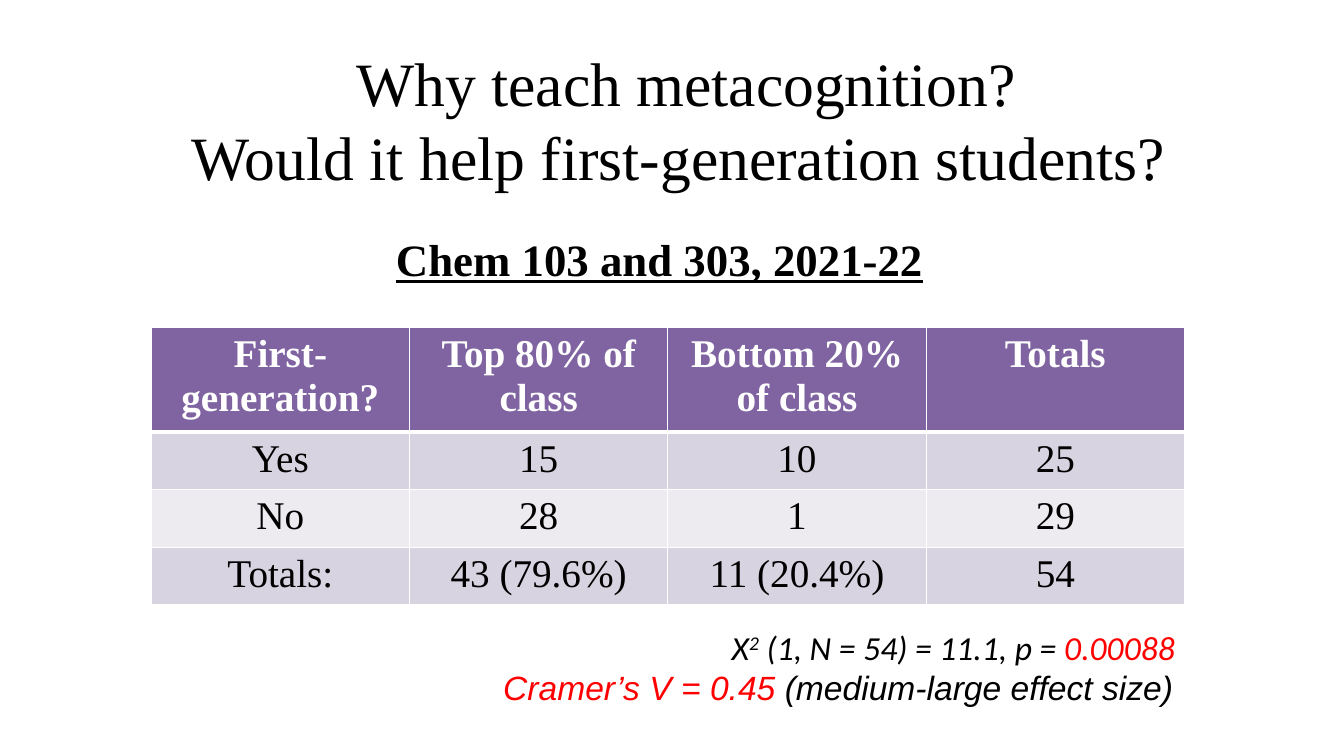
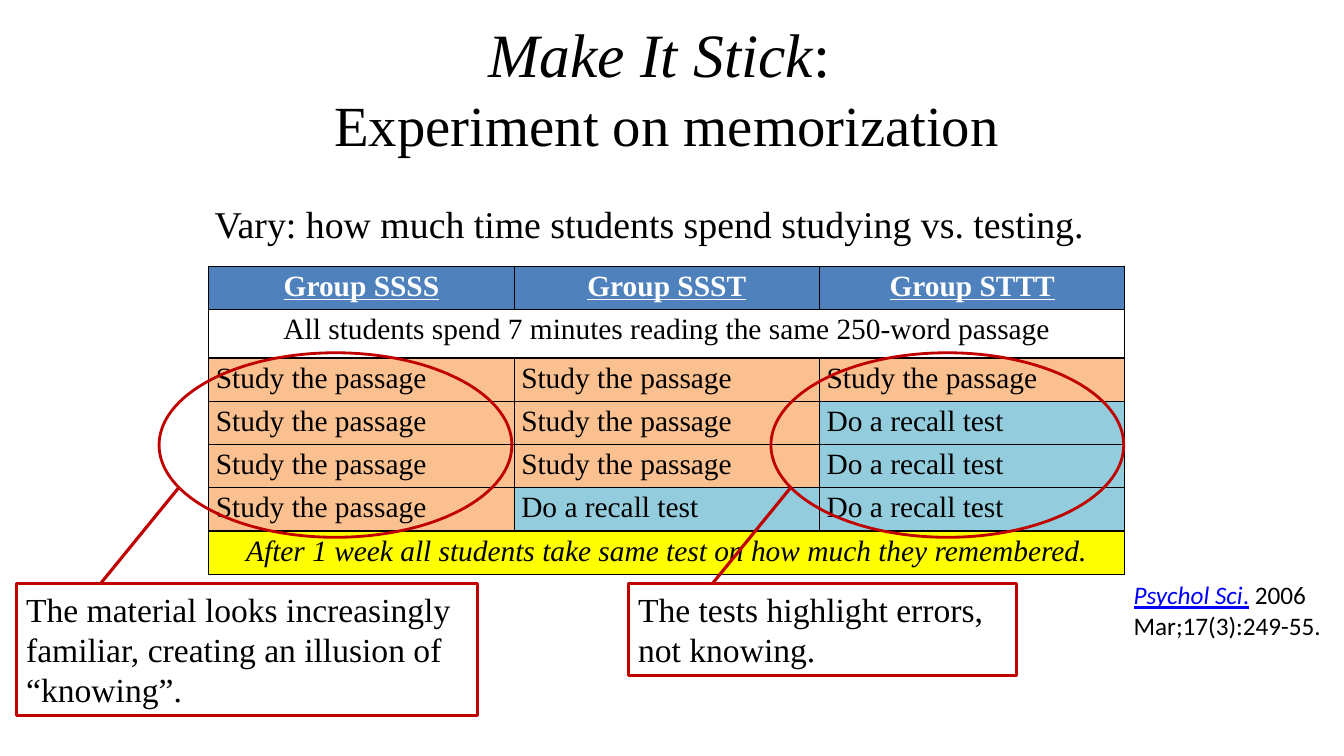
from lxml import etree
from pptx import Presentation
from pptx import util as u
from pptx.dml.color import RGBColor
from pptx.enum import shapes, text
from pptx.oxml.ns import qn

BLACK = RGBColor(0x00, 0x00, 0x00)
WHITE = RGBColor(0xFF, 0xFF, 0xFF)
RED = RGBColor(0xFF, 0x00, 0x00)
DARK_RED = RGBColor(0xC0, 0x00, 0x00)
LINK_BLUE = RGBColor(0x00, 0x00, 0xFF)
PURPLE = RGBColor(0x80, 0x64, 0xA2)
LILAC = RGBColor(0xD8, 0xD3, 0xE0)
PALE_LILAC = RGBColor(0xED, 0xEA, 0xF0)
BLUE = RGBColor(0x4F, 0x81, 0xBD)
ORANGE = RGBColor(0xFA, 0xC0, 0x90)
AQUA = RGBColor(0x93, 0xCD, 0xDD)
YELLOW = RGBColor(0xFF, 0xFF, 0x00)

SERIF = "Times New Roman"
LEFT, CENTER, RIGHT = text.PP_ALIGN.LEFT, text.PP_ALIGN.CENTER, text.PP_ALIGN.RIGHT
TITLE = {"size": 44, "align": CENTER, "anchor": text.MSO_ANCHOR.MIDDLE}


def write(frame, paragraphs, size, align=LEFT, anchor=text.MSO_ANCHOR.TOP,
          font=SERIF, color=BLACK, bold=False, italic=False, underline=False):
    """Each paragraph is a list of (text, run overrides); a newline is a line break."""
    frame.word_wrap = True
    frame.vertical_anchor = anchor
    for index, runs in enumerate(paragraphs):
        paragraph = frame.add_paragraph() if index else frame.paragraphs[0]
        paragraph.alignment = align
        paragraph.font.name, paragraph.font.size = font, u.Pt(size)
        paragraph.font.bold, paragraph.font.italic = bold, italic
        paragraph.font.underline = underline
        paragraph.font.color.rgb = color
        for words, changes in runs:
            if words == "\n":
                paragraph.add_line_break()
                continue
            run = paragraph.add_run()
            run.text = words
            for name, value in changes.items():
                if name == "color":
                    run.font.color.rgb = value
                elif name == "baseline":
                    run.font._element.set("baseline", str(value))
                else:
                    setattr(run.font, name, value)


def fill_cell(cell, words, fill, border_color, thick_sides=(), **style):
    properties = cell._tc.get_or_add_tcPr()
    for side in ("lnL", "lnR", "lnT", "lnB"):
        width = u.Pt(3 if side in thick_sides else 1)
        line = etree.SubElement(properties, qn("a:" + side), w=str(width))
        solid = etree.SubElement(line, qn("a:solidFill"))
        etree.SubElement(solid, qn("a:srgbClr"), val=str(border_color))
    cell.fill.solid()
    cell.fill.fore_color.rgb = fill
    if words:
        write(cell.text_frame, [[(words, {})]], **style)


presentation = Presentation()
presentation.slide_width, presentation.slide_height = u.Cm(33.87), u.Cm(19.05)
blank = presentation.slide_layouts[6]

# Slide 1: title, caption and statistics
slide = presentation.slides.add_slide(blank)
slide_texts = [
    ((2.41, 0.91, 29.79, 4.17),
     [[("Why teach metacognition?", {})],
      [("Would it help first-generation students? ", {})]], TITLE),
    ((9.73, 5.72, 16.94, 1.63), [[("Chem 103 and 303, 2021-22", {})]],
     {"size": 32, "bold": True, "underline": True}),
    ((5.72, 15.67, 24.33, 2.31),
     [[("X", {}), ("2", {"baseline": 30000}),
       ("\u00a0(1, N = 54) = 11.1, p = ".replace("\u00a0", " "), {}),
       ("0.00088 ", {"color": RED})],
      [("Cramer’s V = 0.45 ", {"name": "Arial", "color": RED}),
       ("(medium-large effect size) ", {"name": "Arial"})]],
     {"size": 24, "align": RIGHT, "font": "Calibri", "italic": True}),
]
for box, paragraphs, style in slide_texts:
    shape = slide.shapes.add_textbox(*map(u.Cm, box))
    write(shape.text_frame, paragraphs, **style)

# Slide 1: class results
results = [
    ["First-generation?", "Top 80% of class", "Bottom 20% of class", "Totals"],
    ["Yes", "15", "10", "25"],
    ["No", "28", "1", "29"],
    ["Totals:", "43 (79.6%)", "11 (20.4%)", "54"],
]
row_fills = [PURPLE, LILAC, PALE_LILAC, LILAC]
row_heights = [2.59, 1.45, 1.45, 1.45]
table = slide.shapes.add_table(
    4, 4, u.Cm(3.81), u.Cm(8.26), u.Cm(26.04), u.Cm(sum(row_heights))).table
for row, values in enumerate(results):
    table.rows[row].height = u.Cm(row_heights[row])
    header = row == 0
    for column, words in enumerate(values):
        fill_cell(table.cell(row, column), words, row_fills[row], WHITE,
                  thick_sides={0: ["lnB"], 1: ["lnT"]}.get(row, ()),
                  size=28, align=CENTER, bold=header, color=WHITE if header else BLACK)

# Slide 2: title, introduction and citation
slide = presentation.slides.add_slide(blank)
slide_texts = [
    ((4.62, 0, 24.38, 4.37),
     [[("Make It Stick", {"italic": True}), (": ", {}), ("\n", {}),
       ("Experiment on memorization", {"size": u.Pt(40.5)})]], TITLE),
    ((5.16, 4.93, 23.57, 1.78),
     [[("Vary: how much time students spend studying vs. testing.", {})]], {"size": 27}),
    ((28.32, 14.48, 5.51, 1.8),
     [[("Psychol Sci", {"color": LINK_BLUE, "underline": True, "italic": True}),
       (".", {"color": LINK_BLUE, "underline": True}),
       (" 2006 Mar;17(3):249-55.", {})]], {"size": 18, "font": "Calibri"}),
]
for box, paragraphs, style in slide_texts:
    shape = slide.shapes.add_textbox(*map(u.Cm, box))
    write(shape.text_frame, paragraphs, **style)

# Slide 2: experiment schedule, S for study and T for test
groups = ["SSSS", "SSST", "STTT"]
activities = {"S": ("Study the passage", ORANGE), "T": ("Do a recall test", AQUA)}
header_style = {"align": CENTER, "color": WHITE, "bold": True, "underline": True}
rows = [([(f"Group {group}", BLUE) for group in groups], header_style)]
rows.append(([("All students spend 7 minutes reading the same 250-word passage", WHITE)],
             {"align": CENTER}))
rows += [([activities[letter] for letter in letters], {}) for letters in zip(*groups)]
rows.append(([("After 1 week all students take same test on how much they remembered.",
               YELLOW)], {"align": CENTER, "italic": True}))

table = slide.shapes.add_table(
    len(rows), 3, u.Cm(5.26), u.Cm(6.71), u.Cm(23.09), u.Cm(7.7)).table
for row, (entries, style) in enumerate(rows):
    table.rows[row].height = u.Cm(1.22 if row == 1 else 1.08)
    if len(entries) == 1:
        table.cell(row, 0).merge(table.cell(row, 2))
        entries = entries + [("", entries[0][1])] * 2
    for column, (words, fill) in enumerate(entries):
        cell = table.cell(row, column)
        cell.margin_left = cell.margin_right = u.Cm(0.18)
        cell.margin_top = cell.margin_bottom = u.Cm(0.1)
        fill_cell(cell, words, fill, BLACK, size=21, **style)

# Slide 2: circled groups with callouts
callouts = [
    (4.01, 11.63, 3.33,
     "The material looks increasingly familiar, creating an illusion of “knowing”."),
    (19.43, 9.78, 2.31, "The tests highlight errors, not knowing."),
]
for left, width, height, words in callouts:
    group = slide.shapes.add_group_shape()
    ellipse = group.shapes.add_shape(
        shapes.MSO_SHAPE.OVAL, u.Cm(left), u.Cm(8.89), u.Cm(8.89), u.Cm(4.65))
    pointer = group.shapes.add_connector(
        shapes.MSO_CONNECTOR.STRAIGHT,
        u.Cm(left + 0.51), u.Cm(12.27), u.Cm(left - 1.48), u.Cm(14.71))
    etree.SubElement(pointer._element.spPr, qn("a:effectLst"))
    note = group.shapes.add_shape(
        shapes.MSO_SHAPE.RECTANGLE,
        u.Cm(left - 3.6), u.Cm(14.71), u.Cm(width), u.Cm(height))
    for shape in (ellipse, note):
        shape.shadow.inherit = False
        shape.fill.background()
    for shape, points in ((ellipse, 2), (pointer, 2.25), (note, 2.25)):
        shape.line.color.rgb = DARK_RED
        shape.line.width = u.Pt(points)
    write(note.text_frame, [[(words, {})]], size=24)

presentation.save("out.pptx")
